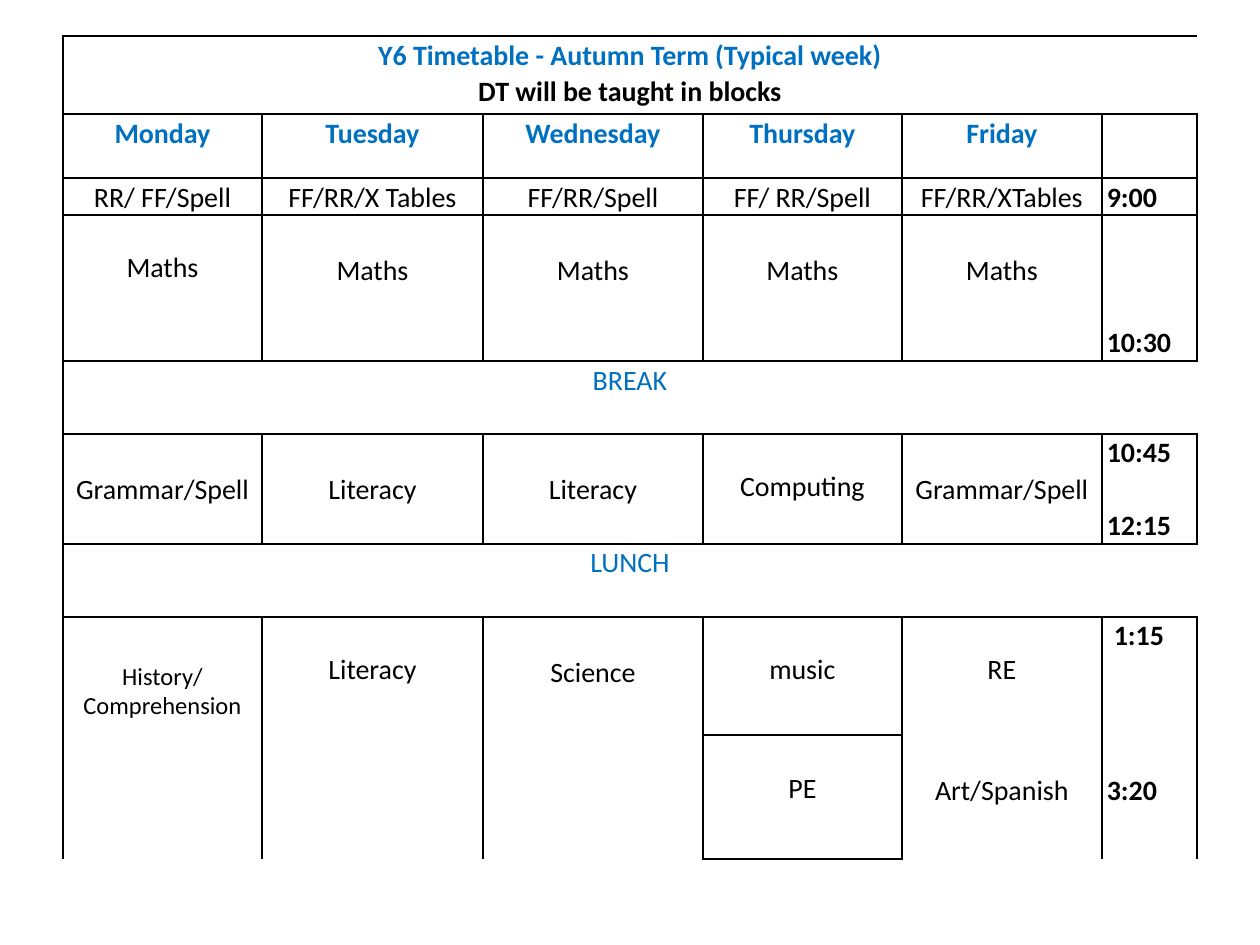
from dataclasses import dataclass

from lxml.etree import SubElement
from pptx import Presentation
from pptx.dml.color import RGBColor
from pptx.enum.text import PP_ALIGN
from pptx.oxml import parse_xml
from pptx.oxml.ns import nsdecls, qn
from pptx.util import Emu, Pt


@dataclass(frozen=True)
class Theme:
    font: str = "Calibri"
    blue: str = "0070C0"
    black: str = "000000"
    white: str = "FFFFFF"
    body: int = 16
    small: int = 14
    spacing: float = 1.07
    border: int = 1


THEME = Theme()
LINE = 37
BLANK = 34
COLUMNS = [199, 221, 220, 199, 200, 95]
ROWS = [78, 64, 37, 146, 73, 110, 73, 118, 0, 124]
TIME = len(COLUMNS) - 1
TITLE, DAYS, EARLY, MATHS, BREAK, MIDDAY, LUNCH, AFTERNOON, SPLIT, LATE = range(len(ROWS))

SPANS = [(row, 0, 1, len(COLUMNS)) for row in (TITLE, BREAK, LUNCH)]
SPANS += [(AFTERNOON, day, 3, 1) for day in range(3)]
SPANS += [(AFTERNOON, 3, 2, 1), (SPLIT, 4, 2, 1), (SPLIT, TIME, 2, 1)]
OPEN_BLOCKS = [(AFTERNOON, 4, 3, 1), (AFTERNOON, TIME, 3, 1)]


def px(length):
    return Emu(round(length * 914400 / 126))


def write(cell, *lines, gap=0, between=0, side=5, align=PP_ALIGN.CENTER,
          color=THEME.black, bold=False, size=THEME.body, spacing=THEME.spacing):
    margins = {"margin_left": px(side), "margin_right": px(5),
               "margin_top": px(gap), "margin_bottom": 0}
    for name, value in margins.items():
        setattr(cell, name, value)
    for index, line in enumerate(lines):
        frame = cell.text_frame
        paragraph = frame.add_paragraph() if index else frame.paragraphs[0]
        layout = {"alignment": align, "line_spacing": spacing,
                  "space_before": px(between) if index else 0}
        for name, value in layout.items():
            setattr(paragraph, name, value)
        run = paragraph.add_run()
        run.text = line
        for name, value in {"name": THEME.font, "size": Pt(size), "bold": bold}.items():
            setattr(run.font, name, value)
        run.font.color.rgb = RGBColor.from_string(color)


def write_time(cell, *times, **layout):
    write(cell, *times, align=PP_ALIGN.LEFT, bold=True, **layout)


def set_border(cell, position, side, visible):
    edge = parse_xml(f'<a:ln{side} {nsdecls("a")} w="{Pt(THEME.border)}"/>')
    if visible:
        fill = SubElement(edge, qn("a:solidFill"))
        SubElement(fill, qn("a:srgbClr"), val=THEME.black)
    else:
        SubElement(edge, qn("a:noFill"))
    cell._tc.get_or_add_tcPr().insert(position, edge)


def style_cells(grid):
    block = {(row, col): (row, col) for row in range(len(ROWS)) for col in range(len(COLUMNS))}
    for top, left, height, width in SPANS + OPEN_BLOCKS:
        for row in range(top, top + height):
            for col in range(left, left + width):
                block[row, col] = (top, left)
    steps = {"L": (0, -1), "R": (0, 1), "T": (-1, 0), "B": (1, 0)}
    for (row, col), owner in block.items():
        cell = grid.cell(row, col)
        cell.fill.solid()
        cell.fill.fore_color.rgb = RGBColor.from_string(THEME.white)
        for position, (side, (down, across)) in enumerate(steps.items()):
            neighbour = block.get((row + down, col + across))
            set_border(cell, position, side, neighbour != owner)


def add_grid(slide, left, top):
    frame = slide.shapes.add_table(len(ROWS), len(COLUMNS), px(left), px(top),
                                   px(sum(COLUMNS)), px(sum(ROWS)))
    grid = frame.table
    for name in ("first_row", "horz_banding"):
        setattr(grid, name, False)
    for column, width in zip(grid.columns, COLUMNS):
        column.width = px(width)
    for row, height in zip(grid.rows, ROWS):
        row.height = px(height)
    for top_row, first, height, width in SPANS:
        last = grid.cell(top_row + height - 1, first + width - 1)
        grid.cell(top_row, first).merge(last)
    style_cells(grid)
    return grid


def fill_heading(grid):
    title = grid.cell(TITLE, 0)
    write(title, "Y6 Timetable - Autumn Term (Typical week)", "DT will be taught in blocks", bold=True)
    title.text_frame.paragraphs[0].runs[0].font.color.rgb = RGBColor.from_string(THEME.blue)
    for col, day in enumerate(["Monday", "Tuesday", "Wednesday", "Thursday", "Friday"]):
        write(grid.cell(DAYS, col), day, color=THEME.blue, bold=True)


def fill_lessons(grid, row, lessons, gaps):
    for col, (lesson, gap) in enumerate(zip(lessons, gaps)):
        write(grid.cell(row, col), lesson, gap=gap)


def fill_morning(grid):
    early = ["RR/ FF/Spell", "FF/RR/X Tables", "FF/RR/Spell", "FF/ RR/Spell", "FF/RR/XTables"]
    midday = ["Grammar/Spell", "Literacy", "Literacy", "Computing", "Grammar/Spell"]
    fill_lessons(grid, EARLY, early, [0] * 5)
    fill_lessons(grid, MATHS, ["Maths"] * 5, [BLANK] + [LINE] * 4)
    fill_lessons(grid, MIDDAY, midday, [LINE] * 3 + [BLANK, LINE])
    write_time(grid.cell(EARLY, TIME), "9:00")
    write_time(grid.cell(MATHS, TIME), "10:30", gap=109)
    write_time(grid.cell(MIDDAY, TIME), "10:45", "12:15", between=36)


def fill_pauses(grid):
    for row, pause in {BREAK: "BREAK", LUNCH: "LUNCH"}.items():
        write(grid.cell(row, 0), pause, color=THEME.blue)


def fill_afternoon(grid):
    write(grid.cell(AFTERNOON, 0), "History/", "Comprehension", gap=45, size=THEME.small, spacing=1.0)
    lessons = {
        (AFTERNOON, 1): ("Literacy", BLANK),
        (AFTERNOON, 2): ("Science", LINE),
        (AFTERNOON, 3): ("music", BLANK),
        (AFTERNOON, 4): ("RE", BLANK),
        (SPLIT, 4): ("Art/Spanish", LINE),
        (LATE, 3): ("PE", BLANK),
    }
    for (row, col), (lesson, gap) in lessons.items():
        write(grid.cell(row, col), lesson, gap=gap)
    write_time(grid.cell(AFTERNOON, TIME), "1:15", side=12)
    write_time(grid.cell(SPLIT, TIME), "3:20", gap=LINE)


def main():
    presentation = Presentation()
    presentation.slide_width = px(1260)
    presentation.slide_height = px(945)
    slide = presentation.slides.add_slide(presentation.slide_layouts[6])
    grid = add_grid(slide, 63, 36)
    for fill in (fill_heading, fill_morning, fill_pauses, fill_afternoon):
        fill(grid)
    presentation.save("out.pptx")


if __name__ == "__main__":
    main()
